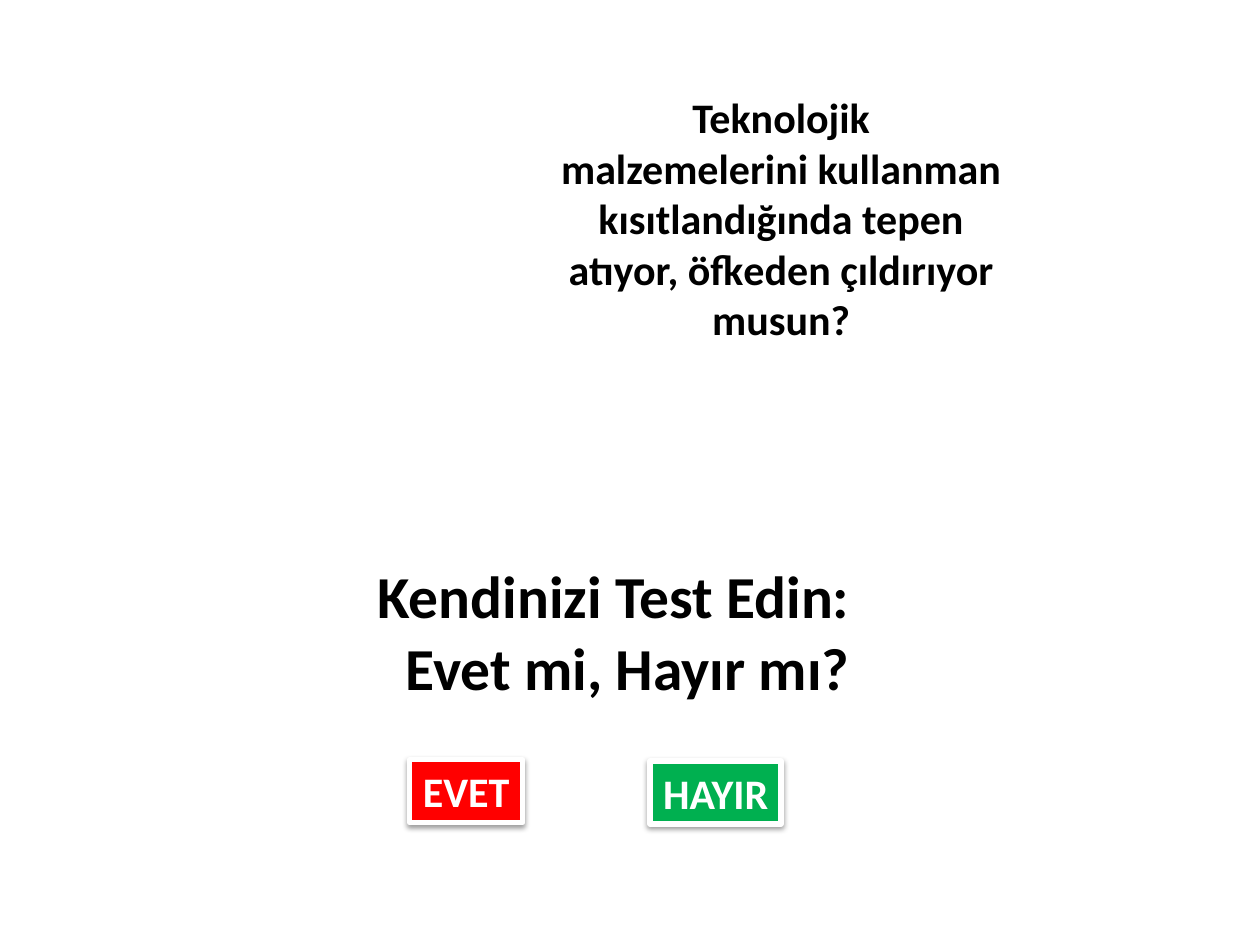
"""Build the self-test slide with a question and two answer buttons."""
from lxml import etree
from pptx import Presentation
from pptx.dml.color import RGBColor
from pptx.enum.shapes import MSO_SHAPE
from pptx.enum.text import MSO_ANCHOR, MSO_AUTO_SIZE, PP_ALIGN
from pptx.oxml import parse_xml
from pptx.oxml.ns import qn
from pptx.util import Inches, Pt

COLORS = {"text": "000000", "white": "FFFFFF", "yes": "FF0000", "no": "00B050"}
SHADOW = (
    '<a:outerShdw xmlns:a="http://schemas.openxmlformats.org/drawingml/2006/main" '
    'blurRad="40000" dist="20000" dir="5400000" rotWithShape="0">'
    '<a:srgbClr val="000000"><a:alpha val="38000"/></a:srgbClr></a:outerShdw>'
)


def rgb(name):
    return RGBColor.from_string(COLORS[name])


def write(shape, lines, size, color, align, wrap=True):
    frame = shape.text_frame
    frame.word_wrap = wrap
    frame.auto_size = MSO_AUTO_SIZE.SHAPE_TO_FIT_TEXT
    frame.vertical_anchor = MSO_ANCHOR.TOP
    for index, line in enumerate(lines):
        paragraph = frame.add_paragraph() if index else frame.paragraphs[0]
        paragraph.alignment = align
        run = paragraph.add_run()
        run.text = line
        run.font.name = "Calibri"
        run.font.size = Pt(size)
        run.font.bold = True
        run.font.color.rgb = rgb(color)


prs = Presentation()
prs.slide_width, prs.slide_height = Inches(10), Inches(7.5)
slide = prs.slides.add_slide(prs.slide_layouts[6])
slide.background.fill.solid()
slide.background.fill.fore_color.rgb = rgb("white")

heading = slide.shapes.add_textbox(Inches(2.09), Inches(4.39), Inches(4.75), Inches(1.25))
write(heading, ["Kendinizi Test Edin: Evet mi, Hayır mı?"], 34, "text", PP_ALIGN.RIGHT)

for label, color, left, top, width in [
    ("EVET", "yes", 3.25, 6.03, 0.9),
    ("HAYIR", "no", 5.16, 6.04, 1.04),
]:
    answer = slide.shapes.add_shape(
        MSO_SHAPE.RECTANGLE, Inches(left), Inches(top), Inches(width), Inches(0.5)
    )
    answer.fill.solid()
    answer.fill.fore_color.rgb = rgb(color)
    answer.line.color.rgb = rgb("white")
    answer.line.width = Pt(3)
    answer.shadow.inherit = False
    answer.element.spPr.find(qn("a:effectLst")).append(parse_xml(SHADOW))
    write(answer, [label], 24, "white", PP_ALIGN.CENTER, wrap=False)

question_lines = [
    "Teknolojik",
    "malzemelerini kullanman",
    "kısıtlandığında tepen",
    "atıyor, öfkeden çıldırıyor",
    "musun?",
]
question = slide.shapes.add_textbox(Inches(3.7), Inches(0.68), Inches(5), Inches(2.12))
write(question, question_lines, 24, "text", PP_ALIGN.CENTER)

prs.save("out.pptx")
